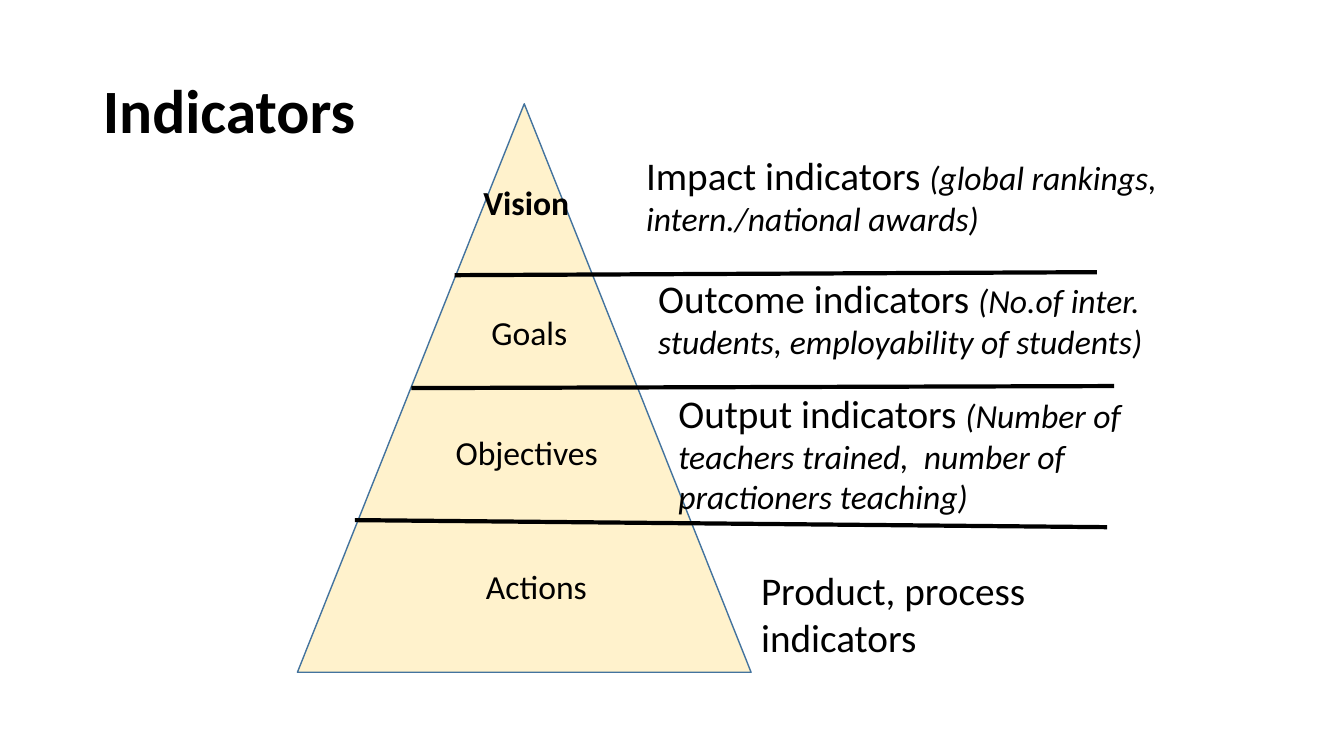
from lxml import etree
from pptx import Presentation
from pptx.dml.color import RGBColor
from pptx.enum.shapes import MSO_CONNECTOR, MSO_SHAPE
from pptx.enum.text import MSO_ANCHOR, MSO_AUTO_SIZE, PP_ALIGN
from pptx.oxml.ns import qn
from pptx.util import Inches, Pt

LEFT, CENTER = PP_ALIGN.LEFT, PP_ALIGN.CENTER
MIDDLE = MSO_ANCHOR.MIDDLE
FIT_SHAPE, NO_FIT = MSO_AUTO_SIZE.SHAPE_TO_FIT_TEXT, MSO_AUTO_SIZE.NONE
STRAIGHT = MSO_CONNECTOR.STRAIGHT
TRIANGLE = MSO_SHAPE.ISOSCELES_TRIANGLE

COLORS = {"text": "000000", "pyramid": "FFF2CC", "edge": "43739E", "divider": "000000"}
FONT = "Calibri"
TITLE_SIZE, INDICATOR_SIZE, DETAIL_SIZE = 44, 28, 24

DIVIDERS = [
    (4.51, 2.73, 10.88, 2.7),
    (4.08, 3.85, 11.05, 3.83),
    (3.52, 5.16, 10.98, 5.23),
]
LEVELS = [
    ("Vision", (3.79, 1.76, 2.86, 0.5), CENTER, True),
    ("Goals", (4.51, 3.05, 1.48, 0.5), CENTER, False),
    ("Objectives", (4.42, 4.24, 1.77, 0.5), LEFT, False),
    ("Actions", (4.33, 5.57, 1.98, 0.5), CENTER, False),
]
INDICATORS = [
    ("Impact indicators ", "(global rankings, intern./national awards)", (6.31, 1.45, 6.44, 0.98)),
    ("Outcome indicators ", "(No.of inter. students, employability of students)", (6.43, 2.67, 6.18, 0.98)),
    ("Output indicators ", "(Number of teachers trained,  number of practioners teaching)", (6.63, 3.81, 5.13, 1.38)),
    ("Product, process indicators", "", (7.45, 5.57, 3.5, 1.04)),
]


def inches(lengths):
    return [Inches(length) for length in lengths]


def color(name):
    return RGBColor.from_string(COLORS[name])


class PyramidSlide:
    def __init__(self, presentation):
        self.slide = presentation.slides.add_slide(presentation.slide_layouts[5])
        self.shapes = self.slide.shapes

    def style(self, run, size, bold=False, italic=False):
        run.font.name = FONT
        run.font.size = Pt(size)
        run.font.bold = bold
        run.font.italic = italic
        run.font.color.rgb = color("text")

    def title(self, wording, box):
        heading = self.shapes.title
        heading.left, heading.top, heading.width, heading.height = inches(box)
        frame = heading.text_frame
        frame.text = wording
        frame.auto_size = NO_FIT
        frame.vertical_anchor = MIDDLE
        paragraph = frame.paragraphs[0]
        paragraph.alignment = LEFT
        paragraph.line_spacing = 0.9
        self.style(paragraph.runs[0], TITLE_SIZE, bold=True)

    def pyramid(self, box):
        triangle = self.shapes.add_shape(TRIANGLE, *inches(box))
        triangle.shadow.inherit = False
        triangle.fill.solid()
        triangle.fill.fore_color.rgb = color("pyramid")
        triangle.line.color.rgb = color("edge")
        triangle.line.width = Pt(1)

    def divider(self, ends):
        line = self.shapes.add_connector(STRAIGHT, *inches(ends))
        line.line.color.rgb = color("divider")
        line.line.width = Pt(3)
        etree.SubElement(line._element.spPr, qn("a:effectLst"))

    def label(self, box, alignment=LEFT):
        frame = self.shapes.add_textbox(*inches(box)).text_frame
        frame.word_wrap = True
        frame.auto_size = FIT_SHAPE
        paragraph = frame.paragraphs[0]
        paragraph.alignment = alignment
        return paragraph

    def level(self, wording, box, alignment, bold):
        paragraph = self.label(box, alignment)
        paragraph.text = wording
        self.style(paragraph.runs[0], DETAIL_SIZE, bold=bold)

    def indicator(self, name, examples, box):
        paragraph = self.label(box)
        paragraph.text = name
        self.style(paragraph.runs[0], INDICATOR_SIZE)
        if examples:
            detail = paragraph.add_run()
            detail.text = examples
            self.style(detail, DETAIL_SIZE, italic=True)


def main():
    presentation = Presentation()
    presentation.slide_width = Inches(13.33)
    presentation.slide_height = Inches(7.5)
    page = PyramidSlide(presentation)
    page.title("Indicators", (0.92, 0.4, 11.5, 1.45))
    page.pyramid((2.95, 1.03, 4.5, 5.64))
    for ends in DIVIDERS:
        page.divider(ends)
    for level in LEVELS:
        page.level(*level)
    for indicator in INDICATORS:
        page.indicator(*indicator)
    presentation.save("out.pptx")


if __name__ == "__main__":
    main()
